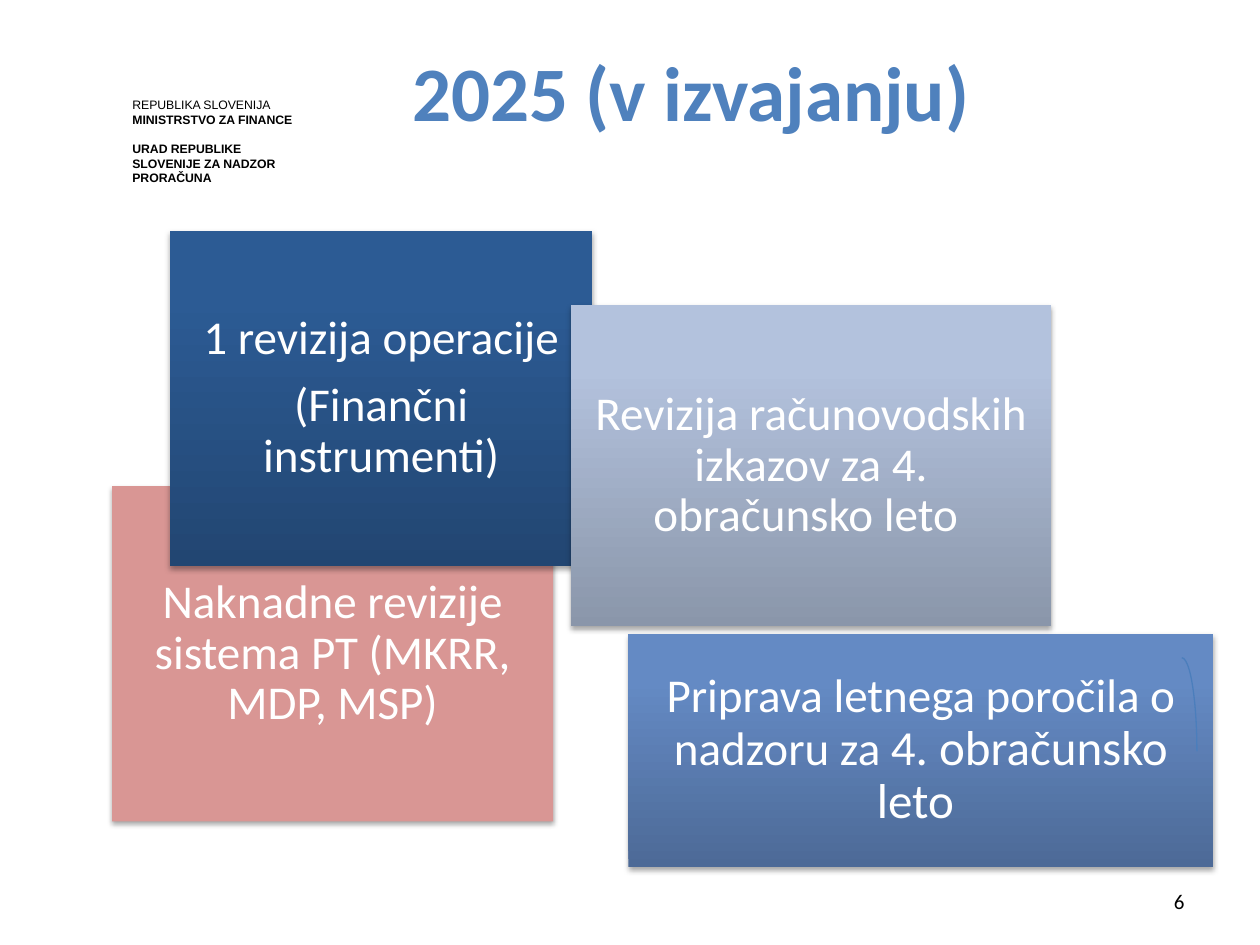
from lxml import etree
from pptx import Presentation
from pptx.dml.color import RGBColor
from pptx.enum.shapes import MSO_SHAPE as Shape
from pptx.enum.text import MSO_ANCHOR as Anchor, PP_ALIGN as Align
from pptx.oxml import parse_xml
from pptx.oxml.ns import nsdecls, qn
from pptx.util import Cm, Pt

BLACK = RGBColor(0x00, 0x00, 0x00)
WHITE = RGBColor(0xFF, 0xFF, 0xFF)
TITLE_BLUE = RGBColor(0x4F, 0x81, 0xBD)
ARC_BLUE = RGBColor(0x4B, 0x7E, 0xBC)
PINK = RGBColor(0xD9, 0x96, 0x94)
NAVY = [RGBColor(0x22, 0x46, 0x72), RGBColor(0x2C, 0x5B, 0x94), RGBColor(0x2A, 0x5B, 0x96)]
PALE = [RGBColor(0x8A, 0x96, 0xAA), RGBColor(0xB3, 0xC2, 0xDD), RGBColor(0xB3, 0xC3, 0xDF)]
BLUE = [RGBColor(0x4D, 0x6A, 0x97), RGBColor(0x64, 0x8A, 0xC4), RGBColor(0x63, 0x8A, 0xC7)]
GRADIENT_STOPS = (0, 80, 100)


def write_paragraph(frame, text, first=False, size=12, font="Calibri", color=BLACK, bold=False,
                    align=Align.LEFT, spacing=None, before=None, after=None):
    paragraph = frame.paragraphs[0] if first else frame.add_paragraph()
    paragraph.alignment = align
    paragraph.line_spacing = spacing
    paragraph.space_before = before
    paragraph.space_after = after
    pieces = [(text, size)] if isinstance(text, str) else text
    for words, points in pieces:
        run = paragraph.add_run()
        run.text = words
        run.font.size = Pt(points)
        run.font.name = font
        run.font.bold = bold
        run.font.color.rgb = color
    return paragraph


def set_frame(shape, margins, anchor=Anchor.TOP):
    frame = shape.text_frame
    frame.word_wrap = True
    frame.vertical_anchor = anchor
    frame.margin_left, frame.margin_top, frame.margin_right, frame.margin_bottom = map(Cm, margins)
    return frame


def add_text_box(slide, box, margins=(0.25, 0.13, 0.25, 0.13), anchor=Anchor.TOP):
    return set_frame(slide.shapes.add_textbox(*map(Cm, box)), margins, anchor)


def fill_gradient(shape, colors):
    stops = "".join(
        f'<a:gs pos="{position * 1000}"><a:srgbClr val="{color}"/></a:gs>'
        for position, color in zip(GRADIENT_STOPS, colors))
    shape.fill.gradient()
    old = shape._element.spPr.find(qn("a:gradFill"))
    old.getparent().replace(old, parse_xml(
        f'<a:gradFill {nsdecls("a")} rotWithShape="1"><a:gsLst>{stops}</a:gsLst>'
        '<a:lin ang="16200000" scaled="0"/></a:gradFill>'))


def add_shadow(shape):
    effects = shape._element.spPr.find(qn("a:effectLst"))
    shadow = etree.SubElement(effects, qn("a:outerShdw"), blurRad=str(Pt(3.1)),
                              dist=str(Pt(1.8)), dir="5400000", rotWithShape="0")
    color = etree.SubElement(shadow, qn("a:srgbClr"), val="000000")
    etree.SubElement(color, qn("a:alpha"), val="35000")


def draw_tile(slide, box, fill, texts):
    tile = slide.shapes.add_shape(Shape.RECTANGLE, *map(Cm, box))
    tile.shadow.inherit = False
    tile.line.fill.background()
    if isinstance(fill, list):
        fill_gradient(tile, fill)
    else:
        tile.fill.solid()
        tile.fill.fore_color.rgb = fill
    add_shadow(tile)
    frame = set_frame(tile, [0.28] * 4, Anchor.MIDDLE)
    for index, text in enumerate(texts):
        write_paragraph(frame, text, first=index == 0, size=26.9, color=WHITE,
                        align=Align.CENTER, spacing=0.9, after=Pt(9.4))


def draw_arc(slide, box):
    arc = slide.shapes.add_shape(Shape.ARC, *map(Cm, box))
    arc.shadow.inherit = False
    arc.fill.background()
    arc.line.color.rgb = ARC_BLUE
    arc.line.width = Pt(0.75)


def draw_activities(slide, left, top):
    tiles = [
        ((0, 5.15, 8.89, 6.76), PINK, ["Naknadne revizije sistema PT (MKRR, MDP, MSP)"]),
        ((1.17, 0, 8.51, 6.76), NAVY, ["1 revizija operacije", "(Finančni instrumenti)"]),
        ((9.25, 1.5, 9.68, 6.48), PALE,
         ["Revizija računovodskih izkazov za 4. obračunsko leto "]),
        ((10.41, 8.13, 11.79, 4.7), BLUE,
         [[("Priprava letnega poročila o nadzoru za ", 26.9), ("4. obračunsko leto ", 28)]]),
    ]
    for (x, y, width, height), fill, texts in tiles:
        draw_tile(slide, (left + x, top + y, width, height), fill, texts)
    draw_arc(slide, (left + 21.26, top + 8.61, 0.61, 3.78))


def draw_letterhead(slide, box):
    frame = add_text_box(slide, box, margins=[0] * 4)
    style = dict(size=7, font="Arial", spacing=Pt(8.4))
    write_paragraph(frame, "REPUBLIKA SLOVENIJA", first=True, **style)
    write_paragraph(frame, "MINISTRSTVO ZA FINANCE", bold=True, **style)
    write_paragraph(frame, "URAD REPUBLIKE SLOVENIJE ZA NADZOR PRORAČUNA",
                    bold=True, before=Pt(8.4), **style)


def draw_title(slide, box):
    frame = add_text_box(slide, box, margins=(2.72, 0.13, 0.25, 0.13))
    write_paragraph(frame, "2025 (v izvajanju)", first=True, size=44, color=TITLE_BLUE,
                    bold=True, align=Align.CENTER)


def draw_page_number(slide, box):
    frame = add_text_box(slide, box, anchor=Anchor.MIDDLE)
    write_paragraph(frame, "6", first=True, align=Align.RIGHT, after=Pt(6))


def main():
    presentation = Presentation()
    presentation.slide_width, presentation.slide_height = Cm(25.4), Cm(19.05)
    slide = presentation.slides.add_slide(presentation.slide_layouts[6])
    draw_letterhead(slide, (2.67, 1.96, 3.35, 1.42))
    draw_title(slide, (1.27, 0.76, 22.86, 3.18))
    draw_page_number(slide, (18.21, 17.65, 5.92, 1.02))
    draw_activities(slide, 2.26, 4.65)
    presentation.save("out.pptx")


if __name__ == "__main__":
    main()
